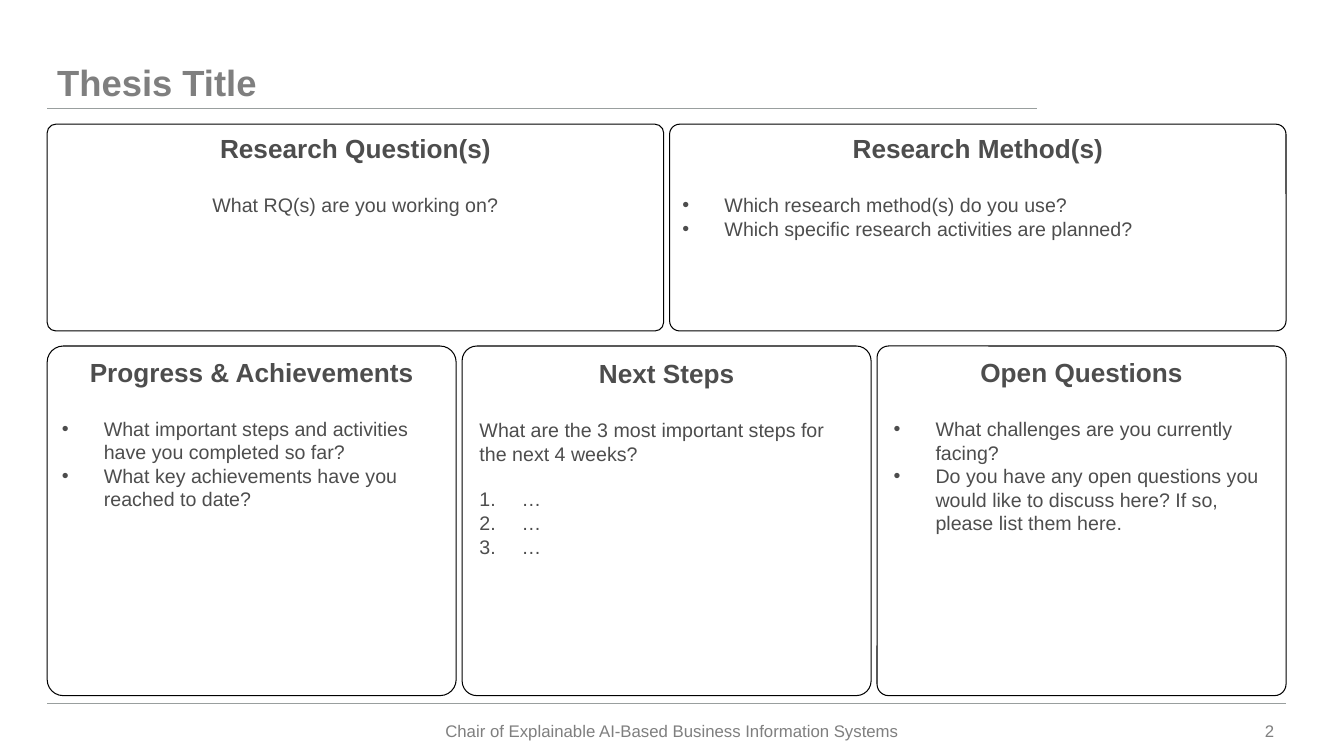
import pptx
import pptx.util
import pptx.dml.color
import pptx.enum.shapes
import pptx.enum.text
import lxml.etree

Cm = pptx.util.Cm
Pt = pptx.util.Pt
RGBColor = pptx.dml.color.RGBColor
ALIGN = pptx.enum.text.PP_ALIGN
ANCHOR = pptx.enum.text.MSO_ANCHOR
SHAPE = pptx.enum.shapes.MSO_SHAPE
NS = "{http://schemas.openxmlformats.org/drawingml/2006/main}"

BLACK = RGBColor(0, 0, 0)
WHITE = RGBColor(255, 255, 255)
DARK = RGBColor(0x4D, 0x4D, 0x4D)
GREY = RGBColor(0x7F, 0x7F, 0x7F)
RULE = RGBColor(0x99, 0x9F, 0x9E)

LEFT, WIDTH, GAP = 1.19, 31.23, 0.15
THIN, WIDE = (0.25, 0.13), (0.33, 0.17)
DOT = ("buChar", "char", "•")
NUM = ("buAutoNum", "type", "arabicPeriod")

TOP = [
    ("Research Question(s)", 0.042, THIN,
     [("What RQ(s) are you working on?", None, 21, ALIGN.CENTER)]),
    ("Research Method(s)", 0.049, THIN,
     [("Which research method(s) do you use?", DOT, 21, ALIGN.LEFT),
      ("Which specific research activities are planned?", DOT, 0, ALIGN.LEFT)]),
]
LOW = [
    ("Progress & Achievements", 0.046, THIN,
     [("What important steps and activities have you completed so far?", DOT, 21, ALIGN.LEFT),
      ("What key achievements have you reached to date?", DOT, 0, ALIGN.LEFT)]),
    ("Next Steps", 0.042, WIDE,
     [("What are the 3 most important steps for the next 4 weeks?", None, 21, ALIGN.LEFT),
      ("…", NUM, 16, ALIGN.LEFT),
      ("…", NUM, 0, ALIGN.LEFT),
      ("…", NUM, 0, ALIGN.LEFT)]),
    ("Open Questions", 0.033, WIDE,
     [("What challenges are you currently facing?", DOT, 21, ALIGN.LEFT),
      ("Do you have any open questions you would like to discuss here? "
       "If so, please list them here.", DOT, 0, ALIGN.LEFT)]),
]


def write(para, text, size, color, bold=False):
    run = para.add_run()
    run.text = text
    run.font.name = "Arial"
    run.font.size = Pt(size)
    run.font.bold = bold
    run.font.color.rgb = color


def inset(frame, pad):
    frame.word_wrap = True
    frame.margin_left = frame.margin_right = Cm(pad[0])
    frame.margin_top = frame.margin_bottom = Cm(pad[1])


def mark(para, kind):
    tag, key, value = kind
    props = para._p.get_or_add_pPr()
    props.set("marL", str(Cm(1.06)))
    props.set("indent", str(-Cm(1.06)))
    lxml.etree.SubElement(props, NS + "buFont").set("typeface", "Arial")
    lxml.etree.SubElement(props, NS + tag).set(key, value)


def rule(slide, x, y, width):
    line = slide.shapes.add_connector(
        pptx.enum.shapes.MSO_CONNECTOR.STRAIGHT, Cm(x), Cm(y), Cm(x + width), Cm(y))
    line.line.color.rgb = RULE
    line.line.width = Pt(0.75)
    lxml.etree.SubElement(line._element.spPr, NS + "effectLst")


def header(slide, x, y, width, height):
    title = slide.shapes.title
    title.left, title.top, title.width, title.height = Cm(x), Cm(y), Cm(width), Cm(height)
    frame = title.text_frame
    inset(frame, THIN)
    frame.auto_size = pptx.enum.text.MSO_AUTO_SIZE.NONE
    frame.vertical_anchor = ANCHOR.BOTTOM
    para = frame.paragraphs[0]
    para.alignment = ALIGN.LEFT
    para.line_spacing = Pt(24)
    write(para, "Thesis Title", 26, GREY, True)
    rule(slide, x, y + height, width)


def card(slide, x, y, width, height, head, round_by, pad, lines):
    box = slide.shapes.add_shape(
        SHAPE.ROUNDED_RECTANGLE, Cm(x), Cm(y), Cm(width), Cm(height))
    box.adjustments[0] = round_by
    box.shadow.inherit = False
    box.fill.solid()
    box.fill.fore_color.rgb = WHITE
    box.line.color.rgb = BLACK
    box.line.width = Pt(0.75)
    frame = box.text_frame
    inset(frame, pad)
    frame.vertical_anchor = ANCHOR.TOP
    para = frame.paragraphs[0]
    para.alignment = ALIGN.CENTER
    write(para, head, 18.7, DARK, True)
    for text, kind, space, align in lines:
        para = frame.add_paragraph()
        if kind:
            mark(para, kind)
        para.alignment = align
        para.space_before = Pt(space)
        write(para, text, 14, DARK)


def row(slide, x, y, width, height, cards):
    each = (width - GAP * (len(cards) - 1)) / len(cards)
    for i, parts in enumerate(cards):
        card(slide, x + i * (each + GAP), y, each, height, *parts)


def footer(slide, x, y, width, height):
    rule(slide, x, y, width)
    notes = [
        (x + 9.71, 12.09, "Chair of Explainable AI-Based Business Information Systems", ALIGN.CENTER),
        (x + width - 2.01, 2.01, "2", ALIGN.RIGHT),
    ]
    for left, wide, text, align in notes:
        box = slide.shapes.add_textbox(Cm(left), Cm(y + 0.18), Cm(wide), Cm(height))
        frame = box.text_frame
        inset(frame, (0.3, 0.15))
        frame.vertical_anchor = ANCHOR.MIDDLE
        para = frame.paragraphs[0]
        para.alignment = align
        write(para, text, 12, GREY)


def main():
    deck = pptx.Presentation()
    deck.slide_width, deck.slide_height = Cm(33.88), Cm(19.05)
    slide = deck.slides.add_slide(deck.slide_layouts[5])
    header(slide, LEFT, 0.91, 24.94, 1.83)
    row(slide, LEFT, 3.13, WIDTH, 5.21, TOP)
    row(slide, LEFT, 8.72, WIDTH, 8.81, LOW)
    footer(slide, LEFT, 17.73, WIDTH, 0.99)
    deck.save("out.pptx")


if __name__ == "__main__":
    main()
